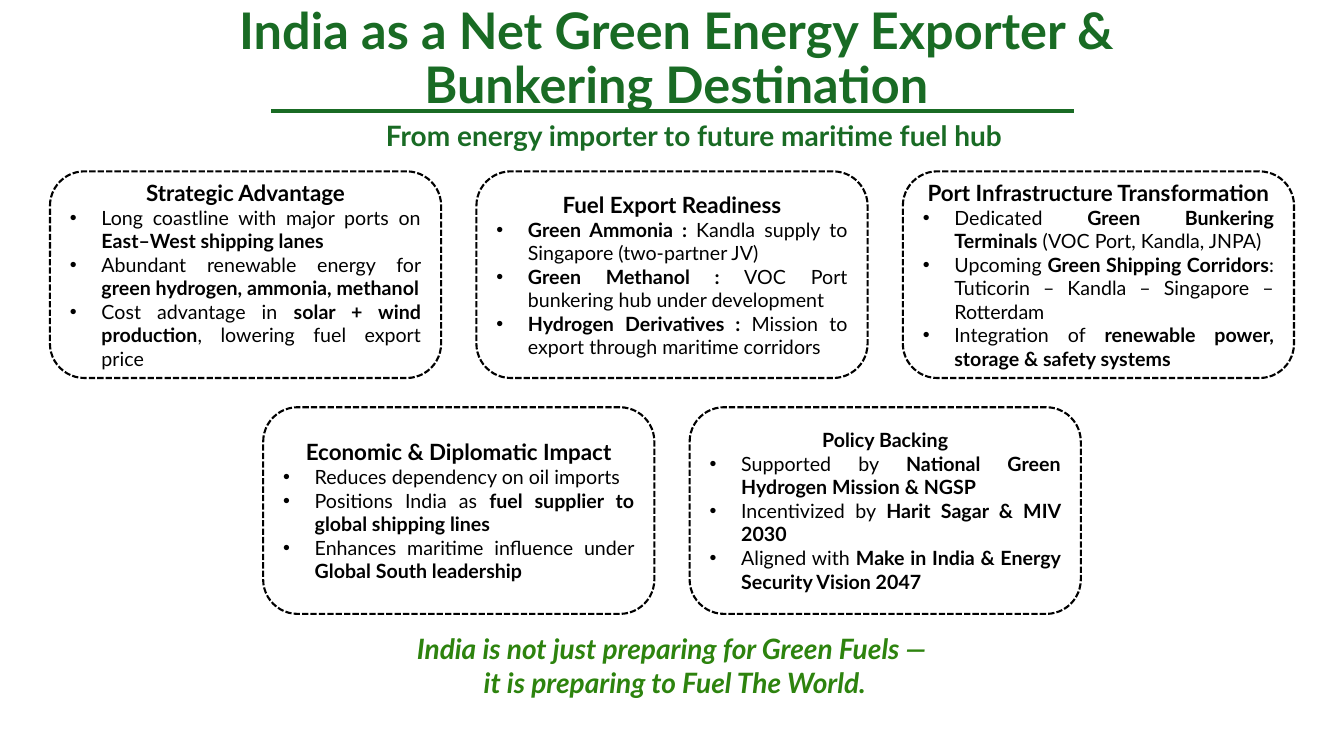
from pptx import Presentation
from pptx.dml.color import RGBColor
from pptx.enum import dml, shapes, text
from pptx.oxml import ns
from pptx.util import Pt
from lxml import etree

COLOURS = {"green": "196B24", "leaf": "2D830E", "ink": "000000", "paper": "FFFFFF"}
PAGE_WIDTH, PAGE_HEIGHT = 960, 540
CARD_WIDTH, CARD_HEIGHT, CARD_GAP = 279.4, 147.6, 25.2
BULLET_INDENT = 22.5
CENTRE, JUSTIFY = text.PP_ALIGN.CENTER, text.PP_ALIGN.JUSTIFY

CARD_ROWS = [
    (122.4, [
        ("Strategic Advantage", 16, [
            "Long coastline with major ports on **East–West shipping lanes",
            "Abundant renewable energy for **green hydrogen, ammonia, methanol",
            "Cost advantage in **solar + wind production**, lowering fuel export price",
        ]),
        ("Fuel Export Readiness", 16, [
            "**Green Ammonia : **Kandla supply to Singapore (two-partner JV)",
            "**Green Methanol :** VOC Port bunkering hub under development",
            "**Hydrogen Derivatives : **Mission to export through maritime corridors",
        ]),
        ("Port Infrastructure Transformation", 16, [
            "Dedicated **Green Bunkering Terminals** (VOC Port, Kandla, JNPA)",
            "Upcoming **Green Shipping Corridors**: Tuticorin – Kandla – Singapore – Rotterdam",
            "Integration of **renewable power, storage & safety systems",
        ]),
    ]),
    (290.9, [
        ("Economic & Diplomatic Impact", 16, [
            "Reduces dependency on oil imports",
            "Positions India as **fuel supplier to global shipping lines",
            "Enhances maritime influence under **Global South leadership",
        ]),
        ("Policy Backing", 14, [
            "Supported by **National Green Hydrogen Mission & NGSP",
            "Incentivized by **Harit Sagar & MIV 2030",
            "Aligned with **Make in India & Energy Security Vision 2047",
        ]),
    ]),
]


def colour(name):
    """Return the named colour."""
    return RGBColor.from_string(COLOURS[name])


def place(shape, box):
    """Move a shape to a box given in points."""
    for name, value in zip(("left", "top", "width", "height"), box):
        setattr(shape, name, Pt(value))


def add_span(para, words, size, ink, **formats):
    """Add one formatted run to a paragraph."""
    span = para.add_run()
    span.text = words
    span.font.color.rgb = colour(ink)
    for name, value in {"name": "Lato", "size": Pt(size), **formats}.items():
        setattr(span.font, name, value)


def add_bullet(para):
    """Give a paragraph a hanging round bullet."""
    properties = para._p.get_or_add_pPr()
    properties.set("marL", str(Pt(BULLET_INDENT)))
    properties.set("indent", str(-Pt(BULLET_INDENT)))
    etree.SubElement(properties, ns.qn("a:buFont")).set("typeface", "Arial")
    etree.SubElement(properties, ns.qn("a:buChar")).set("char", "•")


def add_heading(page, box):
    """Format the title and draw the rule under it."""
    left, top, width, height = box
    title = page.shapes.title
    place(title, box)
    frame = title.text_frame
    for name, value in {"word_wrap": True, "auto_size": text.MSO_AUTO_SIZE.NONE,
                        "vertical_anchor": text.MSO_ANCHOR.MIDDLE}.items():
        setattr(frame, name, value)
    para = frame.paragraphs[0]
    for name, value in {"alignment": CENTRE, "line_spacing": 0.9, "space_before": Pt(0)}.items():
        setattr(para, name, value)
    add_span(para, "India as a Net Green Energy Exporter & Bunkering Destination",
             36, "green", bold=True)
    rule_left, rule_top = left + 64.1, top + 65.5
    rule = page.shapes.add_connector(shapes.MSO_CONNECTOR.STRAIGHT, Pt(rule_left),
                                     Pt(rule_top), Pt(rule_left + 573.1), Pt(rule_top))
    rule.line.color.rgb = colour("green")
    rule.line.width = Pt(3)
    etree.SubElement(rule._element.spPr, ns.qn("a:effectLst"))


def add_statement(page, box, lines, ink, **formats):
    """Add a box of centred bold lines."""
    frame = page.shapes.add_textbox(*map(Pt, box)).text_frame
    frame.word_wrap = True
    for index, line in enumerate(lines):
        para = frame.add_paragraph() if index else frame.paragraphs[0]
        para.alignment = CENTRE
        add_span(para, line, 20, ink, bold=True, **formats)


def add_card(page, box, heading, heading_size, points):
    """Draw a dashed card with a heading and bullets."""
    card = page.shapes.add_shape(shapes.MSO_SHAPE.ROUNDED_RECTANGLE, *map(Pt, box))
    card.shadow.inherit = False
    card.fill.solid()
    card.fill.fore_color.rgb = colour("paper")
    card.line.color.rgb = colour("ink")
    card.line.width = Pt(1.5)
    card.line.dash_style = dml.MSO_LINE.SQUARE_DOT
    frame = card.text_frame
    frame.word_wrap = True
    frame.vertical_anchor = text.MSO_ANCHOR.MIDDLE
    frame.paragraphs[0].alignment = CENTRE
    add_span(frame.paragraphs[0], heading, heading_size, "ink", bold=True)
    for point in points:
        para = frame.add_paragraph()
        add_bullet(para)
        para.alignment = JUSTIFY
        for index, words in enumerate(point.split("**")):
            if words:
                add_span(para, words, 14, "ink", bold=index % 2 == 1)


def add_card_row(page, top, cards):
    """Centre a row of cards on the page."""
    pitch = CARD_WIDTH + CARD_GAP
    left = (PAGE_WIDTH - len(cards) * pitch + CARD_GAP) / 2
    for index, card in enumerate(cards):
        add_card(page, (left + index * pitch, top, CARD_WIDTH, CARD_HEIGHT), *card)


def main():
    """Build and save the slide."""
    deck = Presentation()
    deck.slide_width, deck.slide_height = Pt(PAGE_WIDTH), Pt(PAGE_HEIGHT)
    page = deck.slides.add_slide(deck.slide_layouts[5])
    add_heading(page, (129.6, 13.7, 707, 58.3))
    add_statement(page, (154.1, 81.4, 683.3, 31.7),
                  ["From energy importer to future maritime fuel hub"], "green")
    for top, cards in CARD_ROWS:
        add_card_row(page, top, cards)
    add_statement(page, (162, 447.8, 635.8, 55.4),
                  ["India is not just preparing for Green Fuels —",
                   " it is preparing to Fuel The World."], "leaf", italic=True)
    deck.save("out.pptx")


if __name__ == "__main__":
    main()
